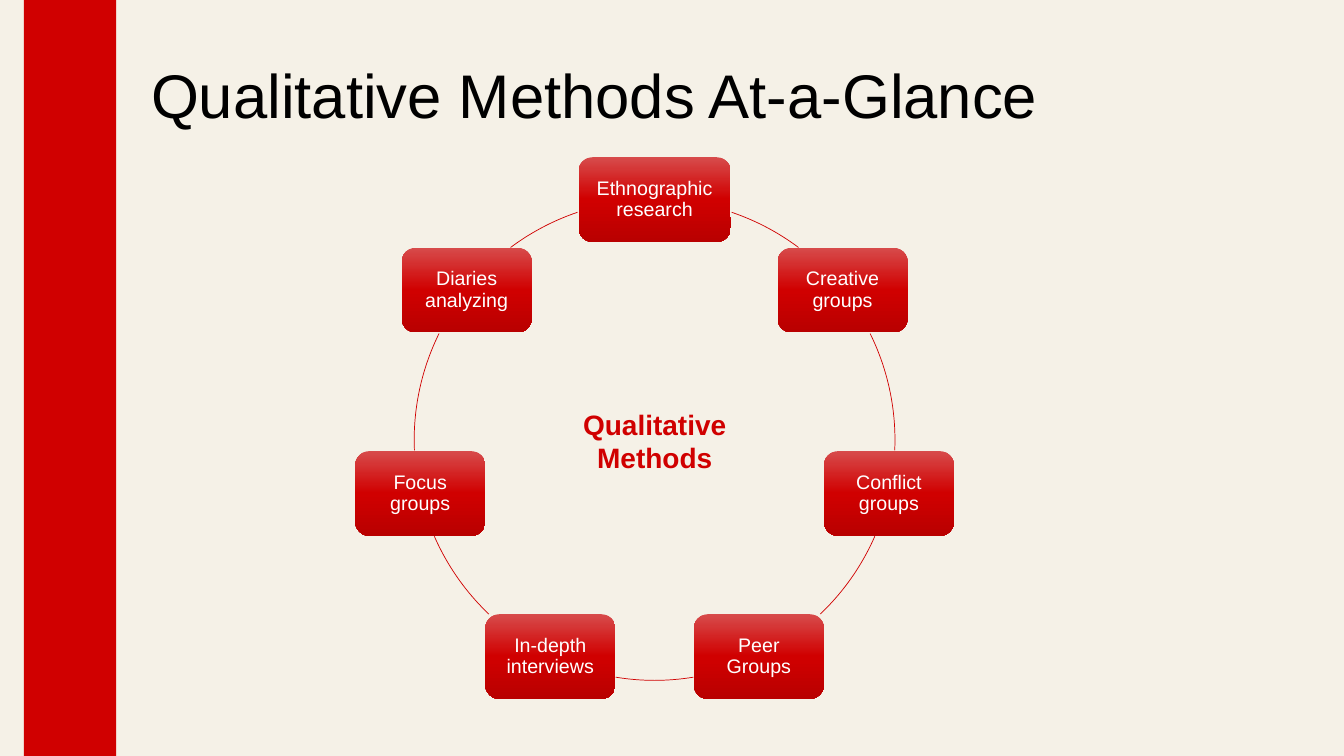
from math import cos, radians, sin

from lxml import etree
from pptx import Presentation
from pptx.dml.color import RGBColor
from pptx.enum.shapes import MSO_SHAPE as Preset
from pptx.enum.text import MSO_ANCHOR as Anchor, PP_ALIGN as Align
from pptx.oxml.ns import qn
from pptx.util import Pt

CREAM = RGBColor(0xF5, 0xF1, 0xE7)
RED = RGBColor(0xD0, 0x00, 0x00)
LIGHT_RED = RGBColor(0xD7, 0x4B, 0x4B)
DARK_RED = RGBColor(0xB9, 0x00, 0x00)
BLACK = RGBColor(0x00, 0x00, 0x00)
WHITE = RGBColor(0xFF, 0xFF, 0xFF)

WIDTH, HEIGHT = 960, 540
CENTRE_X, CENTRE_Y, RADIUS = 467.6, 314.3, 171.7
BOX_WIDTH, TOP_BOX_WIDTH, BOX_HEIGHT = 92.9, 108.7, 60.5

METHODS = [
    "Ethnographic research", "Creative groups", "Conflict groups", "Peer Groups",
    "In-depth interviews", "Focus groups", "Diaries analyzing",
]
# Start and end of each visible arc, in degrees clockwise from the top
RIGHT_ARCS = [(18.7, 36.8), (63.7, 92.5), (113.6, 136.4)]
BOTTOM_ARC = (170.7, 189.3)
LEFT_ARCS = [(360 - end, 360 - start) for start, end in reversed(RIGHT_ARCS)]


class SlideBuilder:
    font_name = "Arial"
    gradient = [(0, LIGHT_RED), (50, RED), (100, DARK_RED)]

    def __init__(self, slide):
        self.slide = slide

    def shape(self, preset, left, top, width, height):
        shape = self.slide.shapes.add_shape(preset, Pt(left), Pt(top), Pt(width), Pt(height))
        shape.shadow.inherit = False
        return shape

    def rectangle(self, left, top, width, height, color):
        shape = self.shape(Preset.RECTANGLE, left, top, width, height)
        shape.fill.solid()
        shape.fill.fore_color.rgb = color
        shape.line.fill.background()

    def set_text(self, shape, text, color, frame_format, paragraph_format, font_format):
        frame = shape.text_frame
        paragraph = frame.paragraphs[0]
        paragraph.text = text
        font_format = {"name": self.font_name, **font_format}
        for target, values in (
            (frame, {"word_wrap": True, **frame_format}),
            (paragraph, paragraph_format),
            (paragraph.font, font_format),
        ):
            for name, value in values.items():
                setattr(target, name, value)
        paragraph.font.color.rgb = color

    def label(self, left, top, width, height, *style):
        box = self.slide.shapes.add_textbox(Pt(left), Pt(top), Pt(width), Pt(height))
        self.set_text(box, *style)

    def arc(self, start, end):
        """Draw part of the ring between two angles clockwise from the top."""
        shape = self.shape(Preset.ARC, CENTRE_X - RADIUS, CENTRE_Y - RADIUS, 2 * RADIUS, 2 * RADIUS)
        for index, angle in enumerate((start, end)):
            # Presets count 60000ths of a degree from the right-hand side
            shape.adjustments[index] = (angle - 90) % 360 * 0.6
        shape.fill.background()
        shape.line.color.rgb = RED
        shape.line.width = Pt(0.5)

    def method_box(self, text, angle, width):
        """Place a gradient box centred on the ring at the given angle."""
        x = CENTRE_X + RADIUS * sin(radians(angle))
        y = CENTRE_Y - RADIUS * cos(radians(angle))
        shape = self.shape(Preset.ROUNDED_RECTANGLE, x - width / 2, y - BOX_HEIGHT / 2,
                           width, BOX_HEIGHT)
        shape.fill.gradient()
        shape.fill.gradient_angle = 270
        stops = shape._element.spPr.find(".//" + qn("a:gsLst"))
        for stop in list(stops):
            stops.remove(stop)
        for percent, color in self.gradient:
            stop = etree.SubElement(stops, qn("a:gs"), pos=str(percent * 1000))
            etree.SubElement(stop, qn("a:srgbClr"), val=str(color))
        shape.line.fill.background()
        margins = {f"margin_{side}": Pt(4.2) for side in ("left", "top", "right", "bottom")}
        self.set_text(shape, text, WHITE, {"vertical_anchor": Anchor.MIDDLE, **margins},
                      {"alignment": Align.CENTER, "line_spacing": 0.9}, {"size": Pt(14)})


def main():
    presentation = Presentation()
    presentation.slide_width, presentation.slide_height = Pt(WIDTH), Pt(HEIGHT)
    builder = SlideBuilder(presentation.slides.add_slide(presentation.slide_layouts[6]))

    builder.rectangle(0, 0, WIDTH, HEIGHT, CREAM)
    builder.rectangle(17, 0, 66, HEIGHT, RED)
    builder.label(100.8, 28.8, 793.4, 69.1, "Qualitative Methods At-a-Glance", BLACK,
                  {"vertical_anchor": Anchor.BOTTOM}, {"line_spacing": 0.9}, {"size": Pt(44)})

    arcs = [*RIGHT_ARCS, BOTTOM_ARC, *LEFT_ARCS]
    for index, (method, arc) in enumerate(zip(METHODS, arcs)):
        width = BOX_WIDTH if index else TOP_BOX_WIDTH
        builder.method_box(method, index * 360 / len(METHODS), width)
        builder.arc(*arc)

    builder.label(373, 287.3, 189.4, 55.4, "Qualitative Methods", RED, {},
                  {"alignment": Align.CENTER}, {"size": Pt(20), "bold": True})
    presentation.save("out.pptx")


if __name__ == "__main__":
    main()
